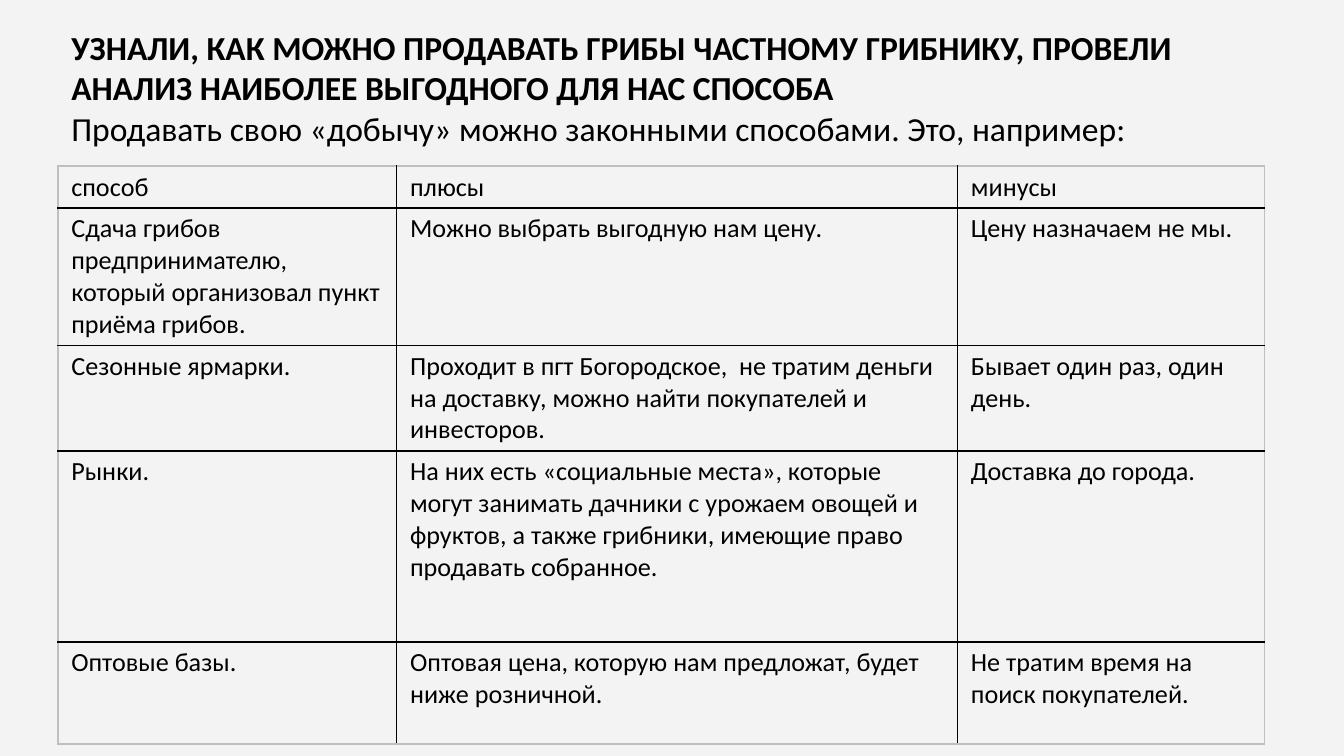
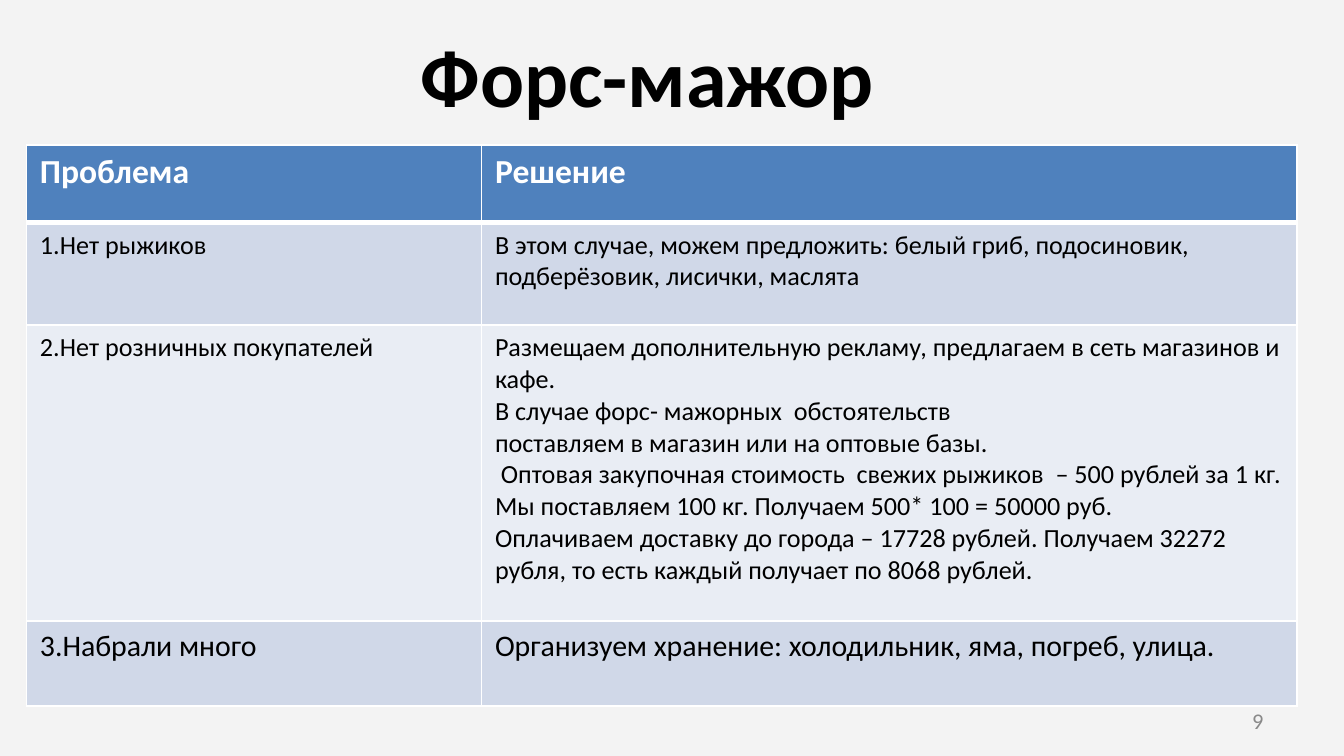
from lxml import etree
from pptx import Presentation
from pptx.dml.color import RGBColor
from pptx.enum.text import MSO_ANCHOR, MSO_AUTO_SIZE, PP_ALIGN
from pptx.oxml.ns import qn
from pptx.util import Pt

TOP, MIDDLE = MSO_ANCHOR.TOP, MSO_ANCHOR.MIDDLE
LEFT, CENTER, RIGHT = PP_ALIGN.LEFT, PP_ALIGN.CENTER, PP_ALIGN.RIGHT
NO_AUTOFIT = MSO_AUTO_SIZE.NONE

FONT = "Calibri"
BACKGROUND = RGBColor(0xF3, 0xF3, 0xF3)
BLACK = RGBColor(0, 0, 0)
WHITE = RGBColor(0xFF, 0xFF, 0xFF)
FRAME_GRAY = RGBColor(0xBF, 0xBF, 0xBF)
NUMBER_GRAY = RGBColor(0x89, 0x89, 0x89)
HEADER_BLUE = RGBColor(0x4F, 0x81, 0xBD)
BAND_DARK = RGBColor(0xD0, 0xD8, 0xE8)
BAND_LIGHT = RGBColor(0xE9, 0xED, 0xF4)

SALES_METHODS = [
    ["способ", "плюсы", "минусы"],
    ["Сдача грибов предпринимателю, который организовал пункт приёма грибов.",
     "Можно выбрать выгодную нам цену.",
     "Цену назначаем не мы."],
    ["Сезонные ярмарки.",
     "Проходит в пгт Богородское,  не тратим деньги на доставку, "
     "можно найти покупателей и инвесторов.",
     "Бывает один раз, один день."],
    ["Рынки.",
     "На них есть «социальные места», которые могут занимать дачники с урожаем "
     "овощей и фруктов, а также грибники, имеющие право продавать собранное.",
     "Доставка до города."],
    ["Оптовые базы.",
     "Оптовая цена, которую нам предложат, будет ниже розничной.",
     "Не тратим время на поиск покупателей."],
]

PROBLEMS = [
    ["Проблема", "Решение"],
    ["1.Нет рыжиков",
     "В этом случае, можем предложить: белый гриб, подосиновик, "
     "подберёзовик, лисички, маслята"],
    ["2.Нет розничных покупателей",
     "Размещаем дополнительную рекламу, предлагаем в сеть магазинов и кафе.\n"
     "В случае форс- мажорных  обстоятельств\n"
     "поставляем в магазин или на оптовые базы.\n"
     " Оптовая закупочная стоимость  свежих рыжиков  – 500 рублей за 1 кг.\n"
     "Мы поставляем 100 кг. Получаем 500* 100 = 50000 руб.\n"
     "Оплачиваем доставку до города – 17728 рублей. Получаем 32272 рубля, "
     "то есть каждый получает по 8068 рублей."],
    ["3.Набрали много",
     "Организуем хранение: холодильник, яма, погреб, улица."],
]


def format_paragraph(paragraph, size, color=BLACK, bold=False, align=LEFT):
    paragraph.alignment = align
    font = paragraph.font
    font.name, font.size, font.bold = FONT, Pt(size), bold
    font.color.rgb = color


def add_slide(presentation):
    slide = presentation.slides.add_slide(presentation.slide_layouts[5])
    fill = slide.background.fill
    fill.solid()
    fill.fore_color.rgb = BACKGROUND
    return slide


def set_title(slide, box, lines, size, align=LEFT):
    title = slide.shapes.title
    title.left, title.top, title.width, title.height = map(Pt, box)
    frame = title.text_frame
    frame.text = "\n".join(lines)
    frame.word_wrap = True
    frame.auto_size = NO_AUTOFIT
    frame.vertical_anchor = TOP
    for index, paragraph in enumerate(frame.paragraphs):
        format_paragraph(paragraph, size, bold=index == 0, align=align)


def add_slide_number(slide, number):
    box = slide.shapes.add_textbox(Pt(516), Pt(375), Pt(168), Pt(21.6))
    frame = box.text_frame
    frame.word_wrap = True
    frame.vertical_anchor = MIDDLE
    frame.text = str(number)
    format_paragraph(frame.paragraphs[0], 12, NUMBER_GRAY, align=RIGHT)


def set_border(cell, side, color, width):
    properties = cell._tc.get_or_add_tcPr()
    line = etree.SubElement(properties, qn("a:ln" + side), w=str(Pt(width)))
    fill = etree.SubElement(line, qn("a:solidFill"))
    etree.SubElement(fill, qn("a:srgbClr"), val=str(color))


def add_table(slide, left, top, widths, heights, texts):
    shape = slide.shapes.add_table(
        len(heights), len(widths), Pt(left), Pt(top), Pt(sum(widths)), Pt(sum(heights)))
    table = shape.table
    for column, width in zip(table.columns, widths):
        column.width = Pt(width)
    for row, height, row_texts in zip(table.rows, heights, texts):
        row.height = Pt(height)
        for cell, text in zip(row.cells, row_texts):
            cell.text = text
    return table


def format_cell(cell, size, color=BLACK, bold=False, fill=None):
    for paragraph in cell.text_frame.paragraphs:
        format_paragraph(paragraph, size, color, bold)
    if fill is None:
        cell.fill.background()
    else:
        cell.fill.solid()
        cell.fill.fore_color.rgb = fill


def format_plain_table(table):
    last_row, last_column = len(table.rows) - 1, len(table.columns) - 1
    for r, row in enumerate(table.rows):
        for c, cell in enumerate(row.cells):
            outer = {"L": c == 0, "R": c == last_column, "T": r == 0, "B": r == last_row}
            for side, is_outer in outer.items():
                set_border(cell, side, FRAME_GRAY if is_outer else BLACK, 1)
            cell.margin_top = cell.margin_bottom = Pt(2.7)
            format_cell(cell, 14)


def format_banded_table(table, body_sizes):
    for r, row in enumerate(table.rows):
        for cell in row.cells:
            for side in "LRTB":
                is_header_rule = (r, side) in ((0, "B"), (1, "T"))
                set_border(cell, side, WHITE, 3 if is_header_rule else 1)
            if r == 0:
                format_cell(cell, 18, WHITE, True, HEADER_BLUE)
            else:
                format_cell(cell, body_sizes[r - 1], fill=BAND_DARK if r % 2 else BAND_LIGHT)


def build_sales_slide(presentation):
    slide = add_slide(presentation)
    set_title(slide, (31, 10.8, 646.5, 72.7), [
        "УЗНАЛИ, КАК МОЖНО ПРОДАВАТЬ ГРИБЫ ЧАСТНОМУ ГРИБНИКУ, ПРОВЕЛИ "
        "АНАЛИЗ НАИБОЛЕЕ ВЫГОДНОГО ДЛЯ НАС СПОСОБА",
        "Продавать свою «добычу» можно законными способами. Это, например:",
    ], 18)
    table = add_table(slide, 31, 89, [181.5, 300.5, 164.5],
                      [22.5, 72.8, 55.8, 102.3, 54.6], SALES_METHODS)
    format_plain_table(table)


def build_problems_slide(presentation):
    slide = add_slide(presentation)
    set_title(slide, (167, 10, 360, 65), ["Форс-мажор"], 44, CENTER)
    add_slide_number(slide, 9)
    table = add_table(slide, 14.2, 77.7, [243.8, 436.8],
                      [41.5, 55, 158.6, 45.5], PROBLEMS)
    format_banded_table(table, [14, 14, 16])


def main():
    presentation = Presentation()
    presentation.slide_width, presentation.slide_height = Pt(720), Pt(405)
    build_sales_slide(presentation)
    build_problems_slide(presentation)
    presentation.save("out.pptx")


if __name__ == "__main__":
    main()
